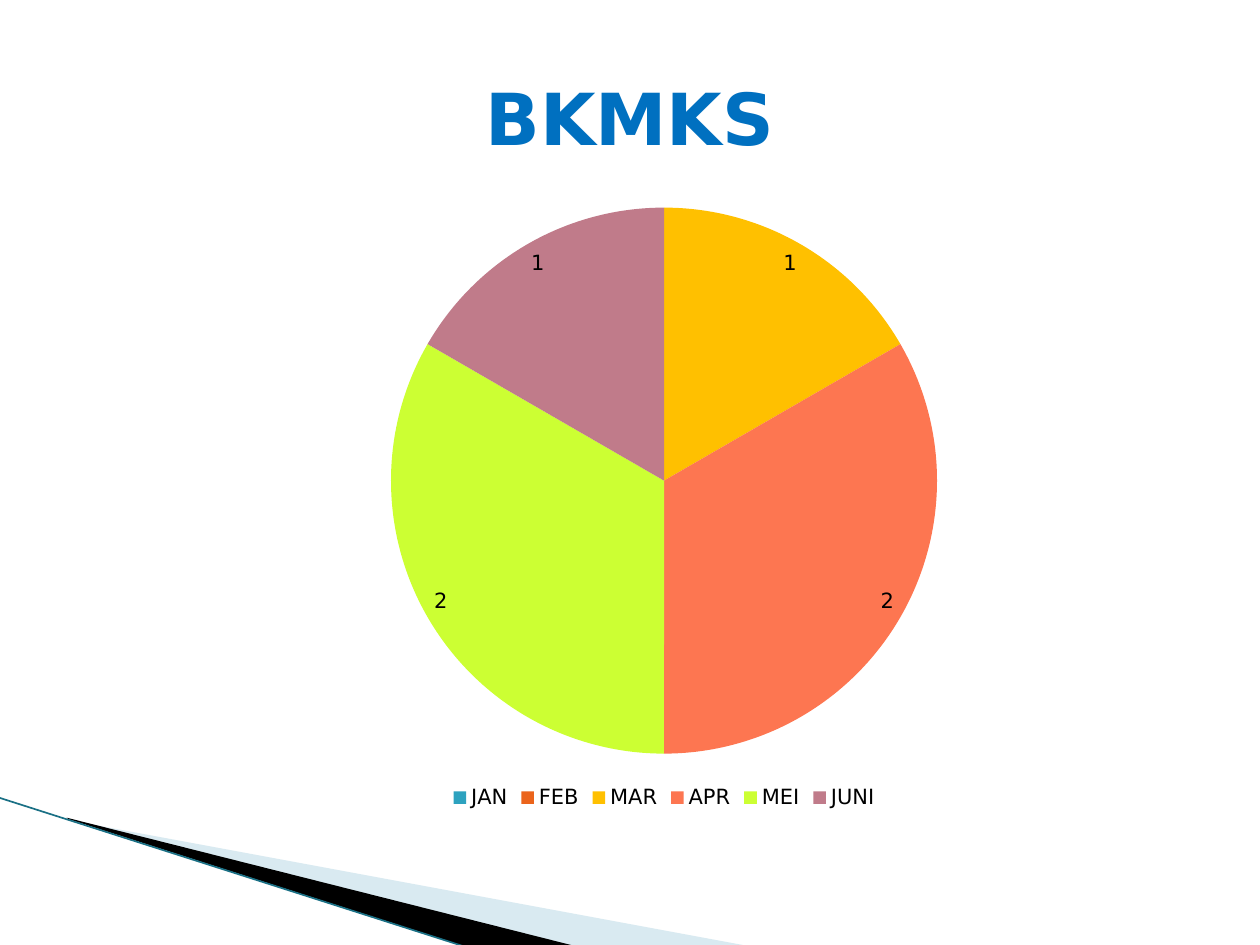
from typing import NamedTuple

from lxml import etree
from pptx import Presentation
from pptx.chart import data as chart_data
from pptx.dml.color import RGBColor
from pptx.enum import chart as chart_enum, text
from pptx.oxml import ns
from pptx.util import Inches, Pt

BLACK = RGBColor(0x00, 0x00, 0x00)
TITLE_BLUE = RGBColor(0x00, 0x70, 0xC0)
PALE_BLUE = RGBColor(0xA0, 0xCB, 0xDC)
EDGE_TEAL = RGBColor(0x1A, 0x70, 0x85)
FONT = "DejaVu Sans"


class Wedge(NamedTuple):
    points: list[tuple[float, float]]
    color: RGBColor
    opacity: int


class Month(NamedTuple):
    name: str
    count: int
    color: RGBColor


WEDGES = [
    Wedge([(0.55, 6.51), (5.95, 7.51), (4.56, 7.51), (0.55, 6.5)], PALE_BLUE, 40),
    Wedge([(0.53, 6.49), (4.57, 7.51), (3.72, 7.52), (0.54, 6.5)], BLACK, 100),
]
MONTHS = [
    Month("JAN", 0, RGBColor(0x2D, 0xA2, 0xBF)),
    Month("FEB", 0, RGBColor(0xEB, 0x64, 0x1B)),
    Month("MAR", 1, RGBColor(0xFF, 0xC0, 0x00)),
    Month("APR", 2, RGBColor(0xFD, 0x76, 0x51)),
    Month("MEI", 2, RGBColor(0xCC, 0xFF, 0x33)),
    Month("JUNI", 1, RGBColor(0xC0, 0x7B, 0x8A)),
]


def set_font(font, size: float, color: RGBColor, bold: bool = False) -> None:
    font.name = FONT
    font.size = Pt(size)
    font.bold = bold
    font.color.rgb = color


def draw_wedge(page, wedge: Wedge) -> None:
    corners = [(Inches(x), Inches(y)) for x, y in wedge.points]
    builder = page.shapes.build_freeform(*corners[0])
    builder.add_line_segments(corners[1:], close=True)
    shape = builder.convert_to_shape()
    shape.shadow.inherit = False
    shape.fill.solid()
    shape.fill.fore_color.rgb = wedge.color
    shape.line.fill.background()
    if wedge.opacity < 100:
        color = shape.fill._xPr.find(".//" + ns.qn("a:srgbClr"))
        etree.SubElement(color, ns.qn("a:alpha"), val=str(wedge.opacity * 1000))


def draw_edge(page) -> None:
    edge = page.shapes.add_connector(
        1, Inches(-0.01), Inches(6.33), Inches(3.71), Inches(7.52))
    edge.line.color.rgb = EDGE_TEAL
    edge.line.width = Pt(0.95)
    etree.SubElement(edge._element.spPr, ns.qn("a:effectLst"))


def draw_title(page) -> None:
    box = page.shapes.add_textbox(Inches(0.5), Inches(0.3), Inches(9), Inches(1.25))
    frame = box.text_frame
    frame.word_wrap = True
    frame.vertical_anchor = text.MSO_ANCHOR.MIDDLE
    para = frame.paragraphs[0]
    para.text = "BKMKS"
    para.alignment = text.PP_ALIGN.CENTER
    set_font(para.font, 41, TITLE_BLUE, bold=True)


def draw_pie(page) -> None:
    """Draw the months as a pie, with labels on the non-zero slices only."""
    data = chart_data.CategoryChartData()
    data.categories = [month.name for month in MONTHS]
    data.add_series("Series 1", [month.count for month in MONTHS])
    chart = page.shapes.add_chart(
        chart_enum.XL_CHART_TYPE.PIE,
        Inches(0.77), Inches(1.51), Inches(9), Inches(4.96), data).chart
    chart.has_title = False
    set_font(chart.font, 12, BLACK)

    chart.has_legend = True
    chart.legend.position = chart_enum.XL_LEGEND_POSITION.BOTTOM
    chart.legend.include_in_layout = False
    set_font(chart.legend.font, 12, BLACK)

    plot = chart.plots[0]
    plot.vary_by_categories = True
    for index, month in enumerate(MONTHS):
        slice_format = plot.series[0].points[index].format
        slice_format.fill.solid()
        slice_format.fill.fore_color.rgb = month.color
        slice_format.line.fill.background()

    plot.has_data_labels = True
    labels = plot.data_labels
    labels.show_value = True
    labels.show_percentage = False
    labels.number_format = "0;;"
    labels.number_format_is_linked = False
    labels.position = chart_enum.XL_LABEL_POSITION.INSIDE_END
    set_font(labels.font, 12, BLACK)


def main() -> None:
    deck = Presentation()
    deck.slide_width, deck.slide_height = Inches(10), Inches(7.5)
    page = deck.slides.add_slide(deck.slide_layouts[6])
    for wedge in WEDGES:
        draw_wedge(page, wedge)
    draw_edge(page)
    draw_title(page)
    draw_pie(page)
    deck.save("out.pptx")


if __name__ == "__main__":
    main()
